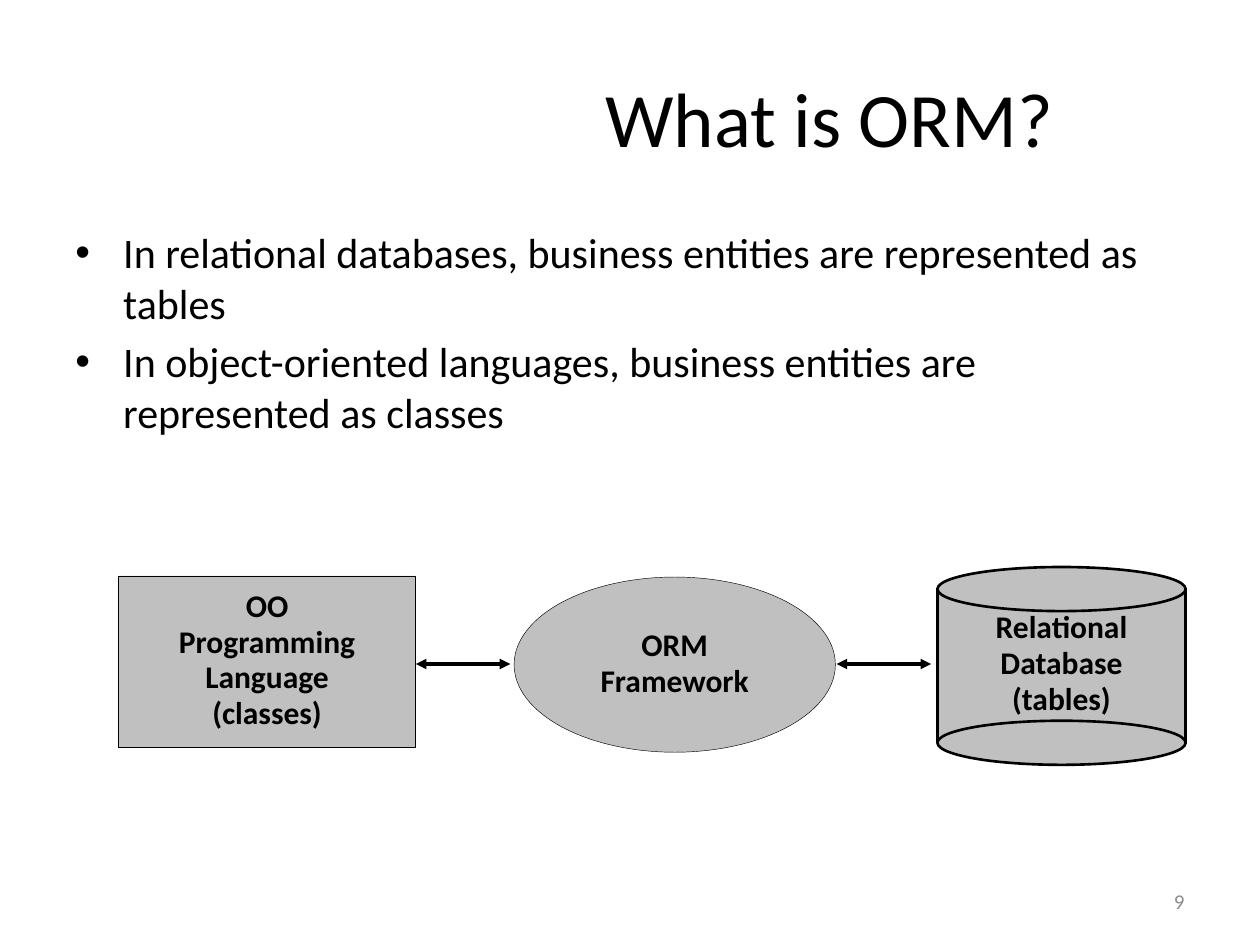
from lxml import etree
from pptx import Presentation
from pptx import util as u
from pptx.dml.color import RGBColor
from pptx.enum import shapes, text
from pptx.oxml import ns

HUES = {"ink": "000000", "gray": "C0C0C0", "pale": "8C8C8C"}
FONT = "Calibri"
FORM = shapes.MSO_SHAPE
ALIGN = text.PP_ALIGN
MID, TOP = text.MSO_ANCHOR.MIDDLE, text.MSO_ANCHOR.TOP
LEFT, WIDE = 7.44, 1.97
LABEL = {"size": u.Pt(18), "bold": True}
CENTER = {"alignment": ALIGN.CENTER, "line_spacing": 0.95}


def hue(name):
    return RGBColor.from_string(HUES[name])


def apply(item, values):
    for key, value in values.items():
        setattr(item, key, value)


def add_dot(para):
    props = para._p.get_or_add_pPr()
    props.set("marL", str(u.Inches(0.38)))
    props.set("indent", str(u.Inches(-0.38)))
    etree.SubElement(props, ns.qn("a:buFont"), typeface="Arial")
    etree.SubElement(props, ns.qn("a:buChar"), char="•")


def write(shape, lines, font, para, anchor=MID, pad=(0.1, 0.05, 0.1, 0.05),
          color="ink", dots=False, gap=0):
    frame = shape.text_frame
    sides = ("margin_left", "margin_top", "margin_right", "margin_bottom")
    apply(frame, {"word_wrap": True, "vertical_anchor": anchor})
    apply(frame, dict(zip(sides, map(u.Inches, pad))))
    for i, line in enumerate(lines):
        item = frame.add_paragraph() if i else frame.paragraphs[0]
        if dots:
            add_dot(item)
        item.text = line
        apply(item, para)
        item.space_before = u.Pt(gap if i else 0)
        apply(item.font, {"name": FONT, **font})
        item.font.color.rgb = hue(color)


def add_text(slide, box, lines, font, para, **more):
    shape = slide.shapes.add_textbox(*map(u.Inches, box))
    write(shape, lines, font, para, **more)


def add_form(slide, kind, box, width):
    shape = slide.shapes.add_shape(kind, *map(u.Inches, box))
    shape.shadow.inherit = False
    shape.fill.solid()
    shape.fill.fore_color.rgb = hue("gray")
    if width:
        shape.line.color.rgb = hue("ink")
        shape.line.width = u.Pt(width)
    else:
        shape.line.fill.background()
    return shape


def add_line(slide, start, end, width, heads=False):
    line = slide.shapes.add_connector(
        shapes.MSO_CONNECTOR.STRAIGHT, *map(u.Inches, start + end))
    line.line.color.rgb = hue("ink")
    line.line.width = u.Pt(width)
    if heads:
        for tag in ("a:headEnd", "a:tailEnd"):
            etree.SubElement(line.line._get_or_add_ln(), ns.qn(tag), type="triangle")
    etree.SubElement(line._element.spPr, ns.qn("a:effectLst"))


def add_drum(slide, lines):
    body = add_form(slide, FORM.RECTANGLE, (LEFT, 4.67, WIDE, 1.22), 0)
    write(body, lines, LABEL, CENTER, pad=(0.16, 0.1, 0.16, 0.12))
    for top in (4.5, 5.72):
        add_form(slide, FORM.OVAL, (LEFT, top, WIDE, 0.35), 1.5)
    for x in (LEFT, LEFT + WIDE):
        add_line(slide, (x, 4.67), (x, 5.89), 1.5)


def main():
    deck = Presentation()
    apply(deck, {"slide_width": u.Inches(10), "slide_height": u.Inches(7.5)})
    slide = deck.slides.add_slide(deck.slide_layouts[6])
    add_text(slide, (3.67, 0.3, 5.83, 1.25), ["What is ORM?"],
             {"size": u.Pt(44)}, {"alignment": ALIGN.CENTER})
    add_text(slide, (0.5, 1.75, 9, 4.95), [
        "In relational databases, business entities are represented as tables",
        "In object-oriented languages, business entities are represented as classes",
    ], {"size": u.Pt(24)}, {}, anchor=TOP, dots=True, gap=4.8)
    add_text(slide, (7.17, 6.95, 2.33, 0.4), ["9"], {"size": u.Pt(12)},
             {"alignment": ALIGN.RIGHT}, color="pale")
    nodes = [
        (FORM.RECTANGLE, (0.94, 4.57, 2.36, 1.36), TOP,
         ["OO", "Programming", "Language", "(classes)"]),
        (FORM.OVAL, (4.08, 4.58, 2.55, 1.39), MID, ["ORM", "Framework"]),
    ]
    for kind, box, anchor, lines in nodes:
        node = add_form(slide, kind, box, 0.25)
        write(node, lines, LABEL, CENTER, anchor, (0, 0.1, 0, 0.12))
    add_drum(slide, ["Relational", "Database", "(tables)"])
    for x in (3.3, 6.64):
        add_line(slide, (x, 5.27), (x + 0.75, 5.27), 2, heads=True)
    deck.save("out.pptx")


if __name__ == "__main__":
    main()
